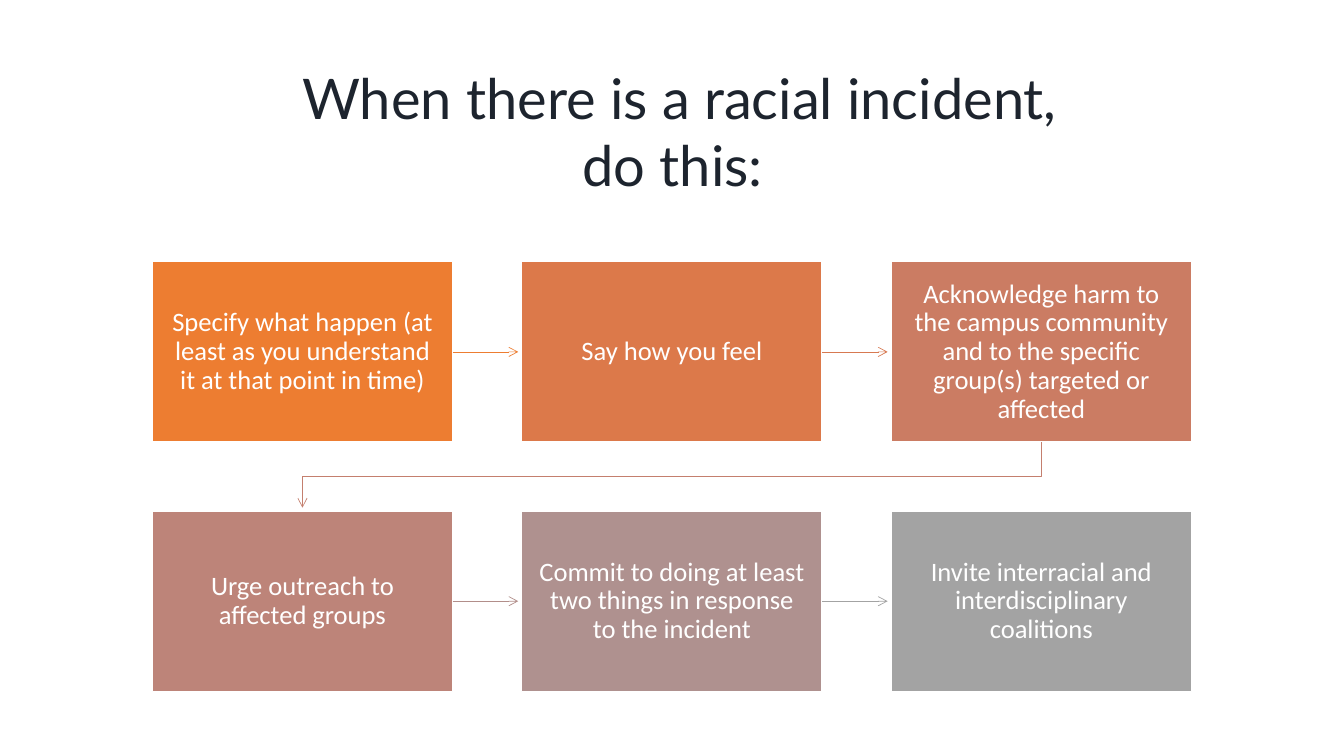
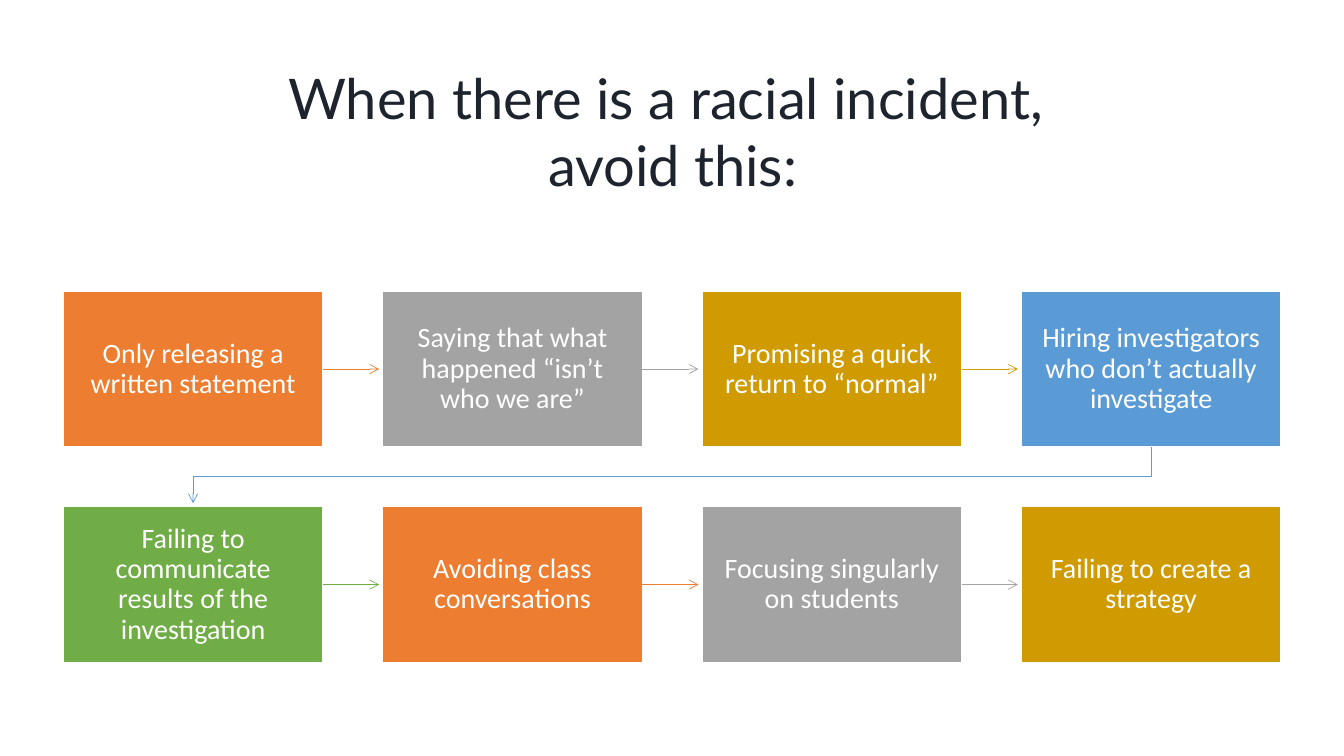
from lxml.etree import SubElement
from pptx import Presentation
from pptx.dml.color import RGBColor
from pptx.enum.shapes import MSO_CONNECTOR, MSO_SHAPE
from pptx.enum.text import MSO_ANCHOR, PP_ALIGN
from pptx.oxml.ns import qn
from pptx.util import Pt

WHITE, INK = "FFFFFF", "1D242E"
ORANGE, GREY, GOLD = "ED7D31", "A3A3A3", "CF9B00"
BLUE, GREEN = "5B9BD5", "70AD47"
TITLE_BOX = (112.5, 40.5, 736, 106)
TITLE_FONT = {"name": "Lato", "size": Pt(40)}
RATIO, GAP, INSET = 0.6, 0.23, 0.05  # height, gap and inset per step width
CLEAR = 2.5  # space between an arrowhead and the next step

# Each step: text, fill, colour of the arrow that leaves it
DO = [
    ("Specify what happen (at least as you understand it at that point in time)",
     ORANGE, ORANGE),
    ("Say how you feel", "DC794A", "D77951"),
    ("Acknowledge harm to the campus community and to the specific group(s) "
     "targeted or affected", "CB7C63", "C47F6E"),
    ("Urge outreach to affected groups", "BD8479", "B28E8A"),
    ("Commit to doing at least two things in response to the incident",
     "AF918F", GREY),
    ("Invite interracial and interdisciplinary coalitions", GREY, GREY),
]
AVOID = [(text, fill, fill) for text, fill in [
    ("Only releasing a written statement", ORANGE),
    ("Saying that what happened “isn’t who we are”", GREY),
    ("Promising a quick return to “normal”", GOLD),
    ("Hiring investigators who don’t actually investigate", BLUE),
    ("Failing to communicate results of the investigation", GREEN),
    ("Avoiding class conversations", ORANGE),
    ("Focusing singularly on students", GREY),
    ("Failing to create a strategy", GOLD),
]]


def tint(target, color):
    target.rgb = RGBColor.from_string(color)


def apply(target, values):
    for name, value in values.items():
        setattr(target, name, value)


def write(frame, text, font, color, inset, spacing=1.0):
    """Fill a frame with one centred paragraph; a newline breaks the line."""
    pad = Pt(inset)
    apply(frame, {"word_wrap": True, "vertical_anchor": MSO_ANCHOR.MIDDLE,
                  "margin_left": pad, "margin_right": pad,
                  "margin_top": pad, "margin_bottom": pad})
    para = frame.paragraphs[0]
    apply(para, {"alignment": PP_ALIGN.CENTER, "line_spacing": spacing})
    for i, part in enumerate(text.split("\n")):
        if i:
            para.add_line_break()
        run = para.add_run()
        run.text = part
        apply(run.font, font)
        tint(run.font.color, color)


def add_title(slide, text, box):
    frame = slide.shapes.add_textbox(*map(Pt, box)).text_frame
    write(frame, text, TITLE_FONT, INK, 5)


def add_step(slide, text, fill, box, size):
    step = slide.shapes.add_shape(MSO_SHAPE.RECTANGLE, *map(Pt, box))
    step.shadow.inherit = False
    step.fill.solid()
    tint(step.fill.fore_color, fill)
    tint(step.line.color, WHITE)
    step.line.width = Pt(1)
    font = {"name": "Calibri", "size": Pt(size)}
    write(step.text_frame, text, font, WHITE, box[2] * INSET, 0.9)
    return step


def style_arrow(line, color):
    tint(line.color, color)
    line.width = Pt(0.5)
    SubElement(line._get_or_add_ln(), qn("a:tailEnd"), type="arrow")


def link_row(slide, step, gap, color):
    """Arrow from the right side of a step towards its neighbour."""
    x, y = step.left + step.width, step.top + step.height // 2
    arrow = slide.shapes.add_connector(
        MSO_CONNECTOR.STRAIGHT, x, y, x + Pt(gap - CLEAR), y)
    arrow.begin_connect(step, 3)
    style_arrow(arrow.line, color)
    SubElement(arrow._element.spPr, qn("a:effectLst"))


def wrap_row(slide, last, first, color):
    """Bent arrow from the end of one row down to the start of the next."""
    start, end = (step.left + step.width // 2 for step in (last, first))
    top = last.top + last.height
    mid = (top + first.top) // 2
    path = slide.shapes.build_freeform(start, top)
    path.add_line_segments(
        [(start, mid), (end, mid), (end, first.top - Pt(CLEAR))], close=False)
    arrow = path.convert_to_shape()
    arrow.shadow.inherit = False
    arrow.fill.background()
    style_arrow(arrow.line, color)


def add_flow(slide, items, cols, box, size):
    """Rows of linked steps in a box given as left, top, width."""
    left, top, width = box
    wide = width / (cols + GAP * (cols - 1))
    high, gap = wide * RATIO, wide * GAP
    steps = []
    for i, (text, fill, _) in enumerate(items):
        row, col = divmod(i, cols)
        place = (left + col * (wide + gap), top + row * (high + gap), wide, high)
        steps.append(add_step(slide, text, fill, place, size))
    for i, (_, _, color) in enumerate(items[:-1]):
        if (i + 1) % cols:
            link_row(slide, steps[i], gap, color)
        else:
            wrap_row(slide, steps[i], steps[i + 1], color)


def add_slide(deck, title, items, cols, box, size):
    slide = deck.slides.add_slide(deck.slide_layouts[6])
    slide.background.fill.solid()
    tint(slide.background.fill.fore_color, WHITE)
    add_title(slide, title, TITLE_BOX)
    add_flow(slide, items, cols, box, size)


def main():
    deck = Presentation()
    apply(deck, {"slide_width": Pt(960), "slide_height": Pt(540)})
    add_slide(deck, " When there is a racial incident,\ndo this:",
              DO, 3, (108.8, 187, 742.3), 19)
    add_slide(deck, "When there is a racial incident, \navoid this:",
              AVOID, 4, (45.2, 208, 869.8), 20)
    deck.save("out.pptx")


if __name__ == "__main__":
    main()
